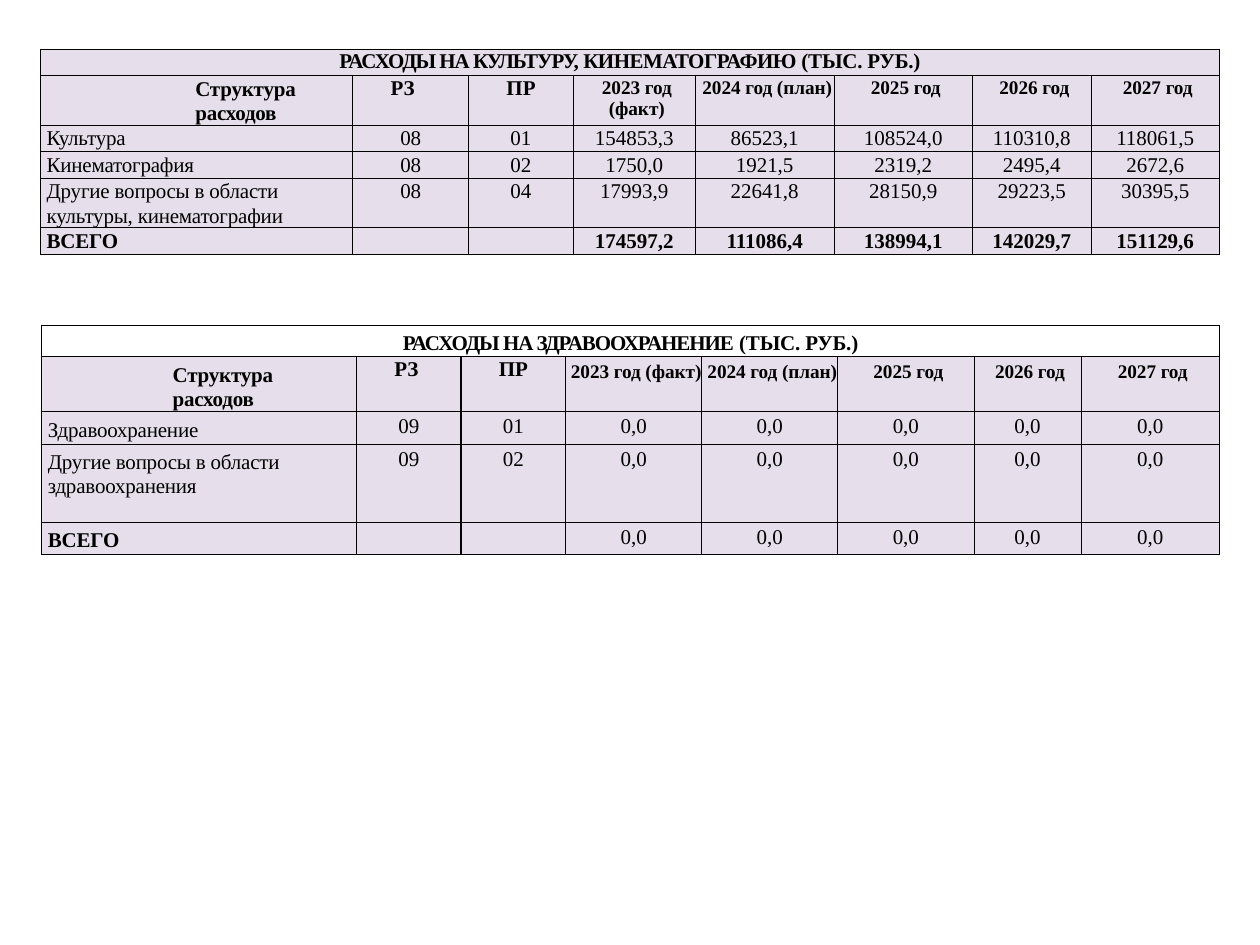
import dataclasses

import pptx
import pptx.dml.color
import pptx.enum.text
import pptx.oxml.ns
import pptx.util
from lxml import etree

Inches, Pt = pptx.util.Inches, pptx.util.Pt
qn = pptx.oxml.ns.qn


@dataclasses.dataclass(frozen=True)
class Theme:
    """Colours, font and sizes of the slide."""
    ink: str = "000000"
    lilac: str = "E6DFEB"
    font: str = "Times New Roman"
    body: float = 12
    year: float = 11
    leading: float = 13.8
    thin: float = 0.5
    thick: float = 1


@dataclasses.dataclass(frozen=True)
class Layout:
    """Measures of one spending table, in inches."""
    cols: tuple
    rows: tuple
    label_top: float
    code_top: float
    year_top: float
    value_top: float
    head_indent: float
    title_filled: bool
    bold_total: bool


THEME = Theme()
YEARS = ("2023 год (факт)", "2024 год (план)", "2025 год", "2026 год", "2027 год")
HEADER = ("Структура расходов", "РЗ", "ПР") + YEARS
ZEROS = ("0,0",) * len(YEARS)

CULTURE_TITLE = (("РАСХОДЫ НА КУЛЬТУРУ, ", -0.6), ("КИНЕМАТОГРАФИЮ ", -0.3), ("(ТЫС. РУБ.)", -0.1))
CULTURE = (
    ("Культура", "08", "01", "154853,3", "86523,1", "108524,0", "110310,8", "118061,5"),
    ("Кинематография", "08", "02", "1750,0", "1921,5", "2319,2", "2495,4", "2672,6"),
    ("Другие вопросы в области культуры, кинематографии", "08", "04",
     "17993,9", "22641,8", "28150,9", "29223,5", "30395,5"),
    ("ВСЕГО", "", "", "174597,2", "111086,4", "138994,1", "142029,7", "151129,6"),
)
CULTURE_LAYOUT = Layout(
    cols=(2.48, 0.92, 0.83, 0.97, 1.1, 1.1, 0.94, 1.02),
    rows=(0.21, 0.39, 0.21, 0.21, 0.39, 0.21),
    label_top=0.01, code_top=0.01, year_top=0.01, value_top=0.01,
    head_indent=1.23, title_filled=True, bold_total=True)

HEALTH_TITLE = (("РАСХОДЫ НА ЗДРАВООХРАНЕНИЕ", -0.6), (" (ТЫС. РУБ.)", -0.1))
HEALTH = (
    ("Здравоохранение", "09", "01") + ZEROS,
    ("Другие вопросы в области здравоохранения", "09", "02") + ZEROS,
    ("ВСЕГО", "", "") + ZEROS,
)
HEALTH_LAYOUT = Layout(
    cols=(2.5, 0.83, 0.83, 1.08, 1.08, 1.08, 0.85, 1.1),
    rows=(0.25, 0.43, 0.26, 0.62, 0.26),
    label_top=0.05, code_top=0.01, year_top=0.04, value_top=0.03,
    head_indent=1.04, title_filled=False, bold_total=False)


def style_cell(cell, col, filled=True):
    """Draw the cell borders, heavier around the code columns, and its fill."""
    tc_pr = cell._tc.get_or_add_tcPr()
    widths = {"L": THEME.thick if col in (2, 3) else THEME.thin,
              "R": THEME.thick if col in (1, 2) else THEME.thin,
              "T": THEME.thin, "B": THEME.thin}
    for side, width in widths.items():
        ln = etree.SubElement(tc_pr, qn(f"a:ln{side}"), w=str(Pt(width)))
        solid = etree.SubElement(ln, qn("a:solidFill"))
        etree.SubElement(solid, qn("a:srgbClr"), val=THEME.ink)
    if filled:
        cell.fill.solid()
        cell.fill.fore_color.rgb = pptx.dml.color.RGBColor.from_string(THEME.lilac)
    else:
        cell.fill.background()


def write_cell(cell, runs, top, size=THEME.body, bold=False, indent=None, fixed=True):
    """Write (text, letter spacing) runs; cells without an indent are centred."""
    cell.margin_left = cell.margin_right = cell.margin_bottom = 0
    cell.margin_top = Inches(top)
    p = cell.text_frame.paragraphs[0]
    if fixed:
        p.line_spacing = Pt(THEME.leading)
    if indent is None:
        p.alignment = pptx.enum.text.PP_ALIGN.CENTER
    else:
        p._p.get_or_add_pPr().set("marL", str(Inches(indent)))
    for text, spacing in runs:
        if not text:
            continue
        r = p.add_run()
        r.text = text
        r.font.name = THEME.font
        r.font.size = Pt(size)
        r.font.bold = bold
        r.font.color.rgb = pptx.dml.color.RGBColor.from_string(THEME.ink)
        r._r.get_or_add_rPr().set("spc", str(round(spacing * 100)))
    etree.SubElement(p._p, qn("a:endParaRPr"), sz=str(round(size * 100)))


def write_header(table, lay):
    """Fill the row of column headings."""
    for col, text in enumerate(HEADER):
        cell = table.cell(1, col)
        if col == 0:
            write_cell(cell, [(text, -0.1)], lay.label_top, bold=True, indent=lay.head_indent)
        elif col < 3:
            write_cell(cell, [(text, 0)], lay.code_top, bold=True, indent=0.3, fixed=False)
        else:
            write_cell(cell, [(text, -0.05)], lay.year_top, THEME.year, bold=True, fixed=False)
            cell.text_frame.paragraphs[0]._p.get_or_add_pPr().set("marL", str(Inches(0.04)))


def add_spending_table(s, left, top, title, records, lay):
    """Place one titled spending table with its corner at left, top."""
    shape = s.shapes.add_table(len(lay.rows), len(lay.cols), Inches(left), Inches(top),
                               Inches(sum(lay.cols)), Inches(sum(lay.rows)))
    table = shape.table
    table.first_row = table.horz_banding = False
    for column, width in zip(table.columns, lay.cols):
        column.width = Inches(width)
    for row, height in zip(table.rows, lay.rows):
        row.height = Inches(height)
    for row in range(len(lay.rows)):
        for col in range(len(lay.cols)):
            style_cell(table.cell(row, col), col, row > 0 or lay.title_filled)
    table.cell(0, 0).merge(table.cell(0, len(lay.cols) - 1))
    write_cell(table.cell(0, 0), title, lay.label_top if not lay.title_filled else 0, bold=True)
    write_header(table, lay)
    for row, record in enumerate(records, start=2):
        total = record is records[-1]
        for col, text in enumerate(record):
            cell = table.cell(row, col)
            if col == 0:
                write_cell(cell, [(text, -0.1)], lay.label_top, bold=total, indent=0.05)
            else:
                write_cell(cell, [(text, 0)], lay.value_top, bold=total and lay.bold_total,
                           fixed=lay.title_filled)


def main():
    """Build the slide and save it."""
    prs = pptx.Presentation()
    prs.slide_width, prs.slide_height = Inches(10), Inches(7.5)
    s = prs.slides.add_slide(prs.slide_layouts[6])
    add_spending_table(s, 0.32, 0.39, CULTURE_TITLE, CULTURE, CULTURE_LAYOUT)
    add_spending_table(s, 0.33, 2.58, HEALTH_TITLE, HEALTH, HEALTH_LAYOUT)
    prs.save("out.pptx")


if __name__ == "__main__":
    main()
